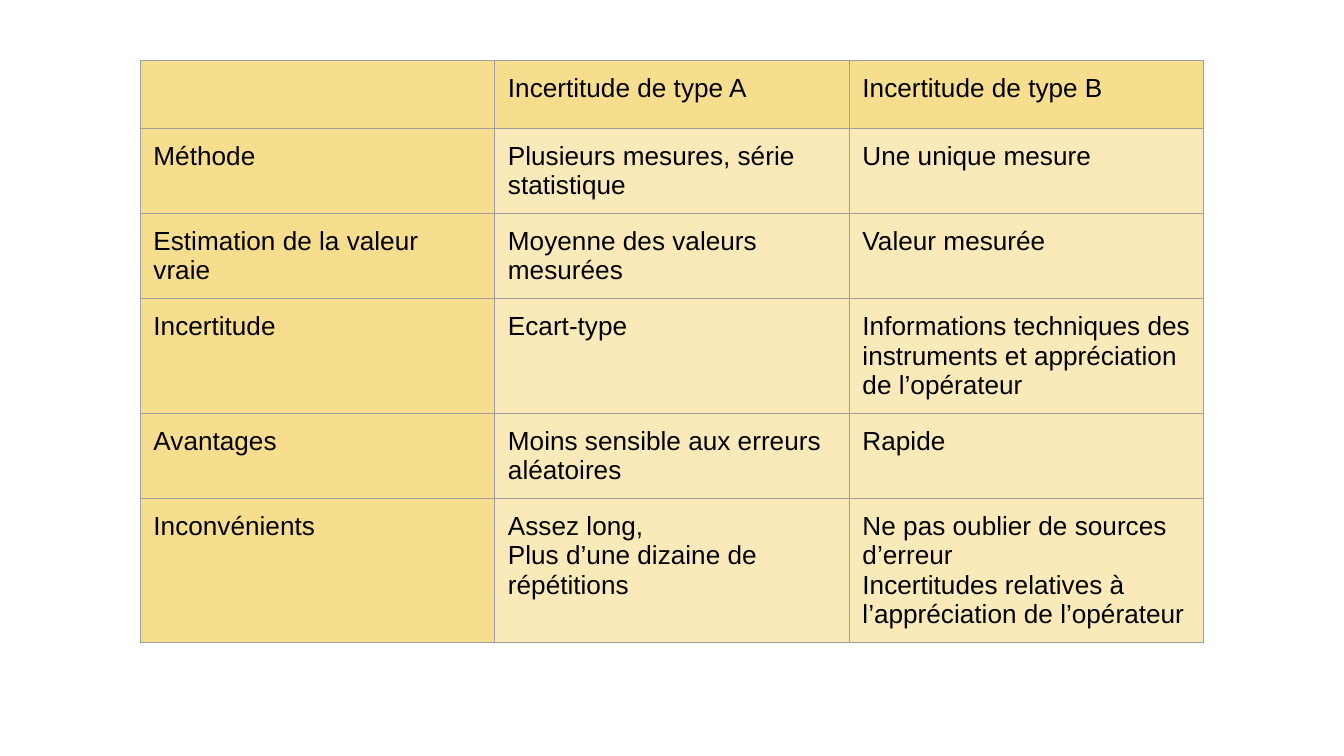
"""Build a slide with a table comparing type A and type B uncertainties."""
from lxml.etree import SubElement
from pptx import Presentation
from pptx.dml.color import RGBColor as RGB
from pptx.oxml import parse_xml
from pptx.oxml.ns import nsdecls, qn
from pptx.util import Cm, Pt

COLORS = {"gold": "F1C232", "border": "9E9E9E", "text": "000000"}
FONT = "Arial"
HEADER_ALPHA, BODY_ALPHA = 55, 34
COL_WIDTH, ROW_HEIGHT, INSET = Cm(6.7), Cm(1.07), Cm(0.25)
ROWS = [
    ("", "Incertitude de type A", "Incertitude de type B"),
    ("Méthode", "Plusieurs mesures, série statistique", "Une unique mesure"),
    ("Estimation de la valeur vraie", "Moyenne des valeurs mesurées", "Valeur mesurée"),
    ("Incertitude", "Ecart-type",
     "Informations techniques des instruments et appréciation de l’opérateur"),
    ("Avantages", "Moins sensible aux erreurs aléatoires", "Rapide"),
    ("Inconvénients", "Assez long,\nPlus d’une dizaine de répétitions",
     "Ne pas oublier de sources d’erreur\n"
     "Incertitudes relatives à l’appréciation de l’opérateur"),
]


def fill_cell(cell, alpha):
    """Fill a cell with translucent gold, alpha in percent."""
    cell.fill.solid()
    cell.fill.fore_color.rgb = RGB.from_string(COLORS["gold"])
    color = next(cell._tc.tcPr.iter(qn("a:srgbClr")))
    SubElement(color, qn("a:alpha")).set("val", str(alpha * 1000))


def add_borders(cell):
    """Draw a thin grey line on the four sides of a cell."""
    for i, side in enumerate("LRTB"):
        cell._tc.tcPr.insert(i, parse_xml(
            f'<a:ln{side} {nsdecls("a")} w="{Pt(0.75)}"><a:solidFill>'
            f'<a:srgbClr val="{COLORS["border"]}"/></a:solidFill></a:ln{side}>'))


def write_cell(cell, text):
    """Put text in a cell, one paragraph per line."""
    cell.margin_left = cell.margin_right = INSET
    cell.margin_top = cell.margin_bottom = INSET
    cell.text_frame.text = text
    for p in cell.text_frame.paragraphs:
        for r in p.runs:
            r.font.name = FONT
            r.font.size = Pt(14)
            r.font.color.rgb = RGB.from_string(COLORS["text"])


def add_comparison_table(s, left, top):
    """Add the table, with a darker first row and first column."""
    n_rows, n_cols = len(ROWS), len(ROWS[0])
    table = s.shapes.add_table(n_rows, n_cols, left, top,
                               COL_WIDTH * n_cols, ROW_HEIGHT * n_rows).table
    table.first_row = table.horz_banding = False
    for i, row in enumerate(ROWS):
        for j, text in enumerate(row):
            cell = table.cell(i, j)
            write_cell(cell, text)
            fill_cell(cell, BODY_ALPHA if i and j else HEADER_ALPHA)
            add_borders(cell)


def main():
    """Create the presentation and save it."""
    prs = Presentation()
    prs.slide_width, prs.slide_height = Cm(25.4), Cm(14.29)
    s = prs.slides.add_slide(prs.slide_layouts[6])
    add_comparison_table(s, Cm(2.65), Cm(1.15))
    prs.save("out.pptx")


if __name__ == "__main__":
    main()
